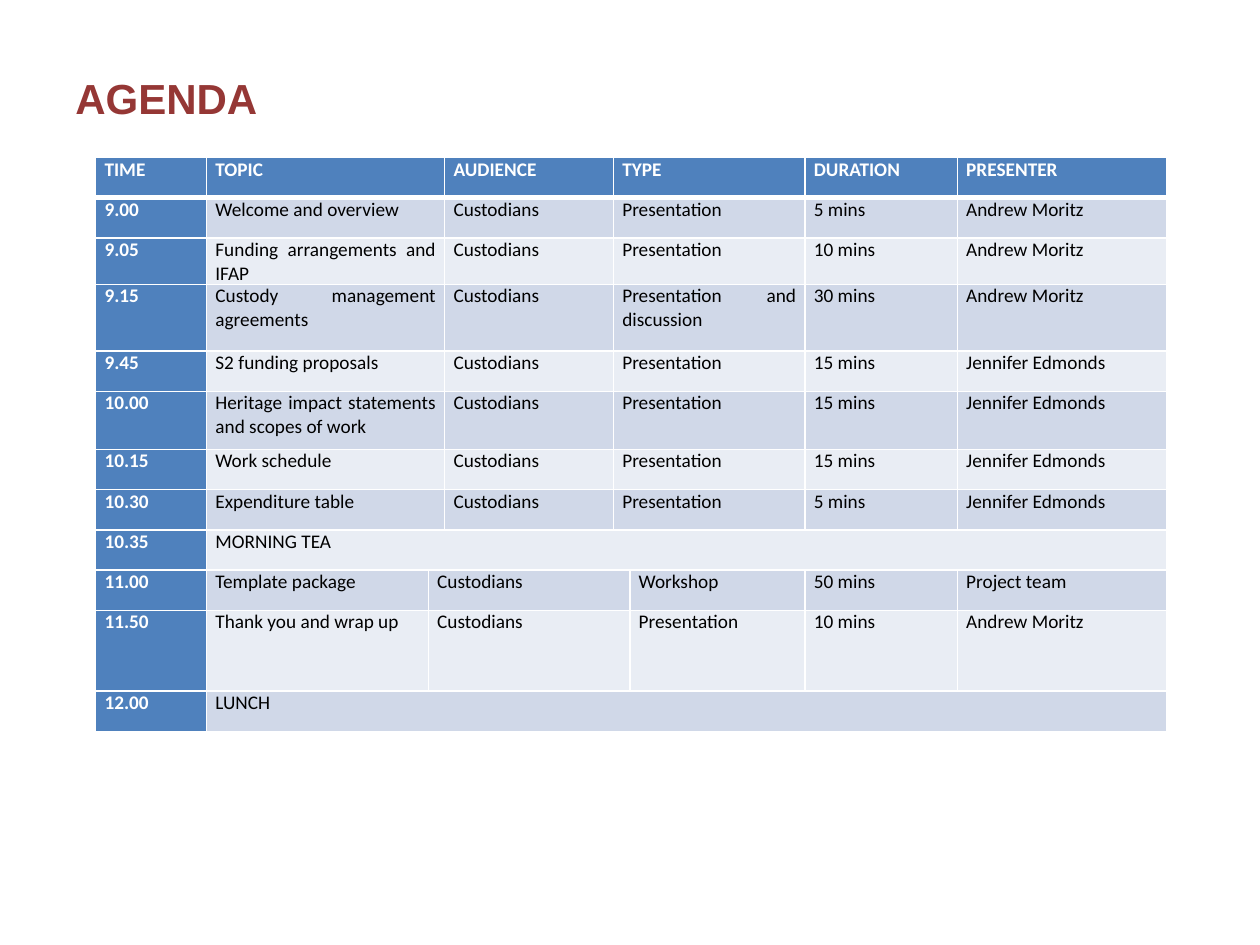
from dataclasses import dataclass

from lxml import etree
from pptx import Presentation
from pptx import util as u
from pptx.dml.color import RGBColor
from pptx.enum import text
from pptx.oxml import ns


@dataclass(frozen=True)
class Theme:
    title_font: str = "Arial"
    table_font: str = "Calibri"
    title_size: float = 24
    table_size: float = 11
    title_color: str = "953735"
    accent: str = "4F81BD"
    odd_band: str = "D0D8E8"
    even_band: str = "E9EDF4"
    light: str = "FFFFFF"
    dark: str = "000000"
    line: float = 1
    heavy_line: float = 3


@dataclass(frozen=True)
class Session:
    cells: tuple[str, ...]
    starts: tuple[int, ...]
    height: float = 0.32


THEME = Theme()
COLUMN_WIDTHS = (0.88, 1.76, 0.13, 1.34, 0.13, 1.39, 1.21, 1.66)

# First grid column of each cell; a cell reaches to the start of the next
MAIN = (0, 1, 3, 4, 6, 7)
LATE = (0, 1, 2, 5, 6, 7)
BREAK = (0, 1)

AGENDA = (
    Session(("TIME", "TOPIC", "AUDIENCE", "TYPE", "DURATION", "PRESENTER"), MAIN),
    Session(("9.00", "Welcome and overview", "Custodians", "Presentation",
             "5 mins", "Andrew Moritz"), MAIN),
    Session(("9.05", "Funding arrangements and IFAP", "Custodians", "Presentation",
             "10 mins", "Andrew Moritz"), MAIN),
    Session(("9.15", "Custody management agreements", "Custodians",
             "Presentation and discussion", "30 mins", "Andrew Moritz"), MAIN, 0.53),
    Session(("9.45", "S2 funding proposals", "Custodians", "Presentation",
             "15 mins", "Jennifer Edmonds"), MAIN),
    Session(("10.00", "Heritage impact statements and scopes of work", "Custodians",
             "Presentation", "15 mins", "Jennifer Edmonds"), MAIN, 0.46),
    Session(("10.15", "Work schedule", "Custodians", "Presentation",
             "15 mins", "Jennifer Edmonds"), MAIN),
    Session(("10.30", "Expenditure table", "Custodians", "Presentation",
             "5 mins", "Jennifer Edmonds"), MAIN),
    Session(("10.35", "MORNING TEA"), BREAK),
    Session(("11.00", "Template package", "Custodians", "Workshop",
             "50 mins", "Project team"), LATE),
    Session(("11.50", "Thank you and wrap up", "Custodians", "Presentation",
             "10 mins", "Andrew Moritz"), LATE, 0.64),
    Session(("12.00", "LUNCH"), BREAK),
)


def add_span(para, words: str, font: str, size: float, color: str, bold: bool) -> None:
    span = para.add_run()
    span.text = words
    span.font.name = font
    span.font.size = u.Pt(size)
    span.font.bold = bold
    span.font.color.rgb = RGBColor.from_string(color)


def add_title(page, words: str) -> None:
    box = page.shapes.add_textbox(u.Inches(0.5), u.Inches(0.3), u.Inches(9), u.Inches(0.95))
    frame = box.text_frame
    frame.word_wrap = True
    frame.vertical_anchor = text.MSO_ANCHOR.MIDDLE
    add_span(frame.paragraphs[0], words, THEME.title_font, THEME.title_size,
             THEME.title_color, True)


def set_borders(cell, top: float, bottom: float) -> None:
    properties = cell._tc.get_or_add_tcPr()
    widths = {"a:lnL": THEME.line, "a:lnR": THEME.line, "a:lnT": top, "a:lnB": bottom}
    for tag, width in widths.items():
        line = etree.SubElement(properties, ns.qn(tag), w=str(u.Pt(width)))
        fill = etree.SubElement(line, ns.qn("a:solidFill"))
        etree.SubElement(fill, ns.qn("a:srgbClr"), val=THEME.light)


def style_cell(cell, row: int, column: int) -> None:
    cell.margin_left = cell.margin_right = u.Inches(0.07)
    cell.margin_top = cell.margin_bottom = 0
    set_borders(cell, THEME.heavy_line if row == 1 else THEME.line,
                THEME.heavy_line if row == 0 else THEME.line)
    band = THEME.odd_band if row % 2 else THEME.even_band
    cell.fill.solid()
    cell.fill.fore_color.rgb = RGBColor.from_string(
        THEME.accent if row == 0 or column == 0 else band)


def fill_row(table, row: int, session: Session) -> None:
    table.rows[row].height = u.Inches(session.height)
    for column in range(len(COLUMN_WIDTHS)):
        style_cell(table.cell(row, column), row, column)
    ends = session.starts[1:] + (len(COLUMN_WIDTHS),)
    for words, start, end in zip(session.cells, session.starts, ends):
        cell = table.cell(row, start)
        if end - start > 1:
            cell.merge(table.cell(row, end - 1))
        para = cell.text_frame.paragraphs[0]
        para.alignment = text.PP_ALIGN.JUSTIFY
        heading = row == 0 or start == 0
        add_span(para, words, THEME.table_font, THEME.table_size,
                 THEME.light if heading else THEME.dark, heading)


def add_agenda(page, sessions: tuple[Session, ...]) -> None:
    table = page.shapes.add_table(
        len(sessions), len(COLUMN_WIDTHS), u.Inches(0.76), u.Inches(1.25),
        u.Inches(sum(COLUMN_WIDTHS)),
        u.Inches(sum(session.height for session in sessions))).table
    table.first_col = True
    for column, width in zip(table.columns, COLUMN_WIDTHS):
        column.width = u.Inches(width)
    for row, session in enumerate(sessions):
        fill_row(table, row, session)


def main() -> None:
    deck = Presentation()
    deck.slide_width, deck.slide_height = u.Inches(10), u.Inches(7.5)
    page = deck.slides.add_slide(deck.slide_layouts[6])

    # Heading
    add_title(page, "AGENDA")

    # Timetable
    add_agenda(page, AGENDA)

    deck.save("out.pptx")


if __name__ == "__main__":
    main()
